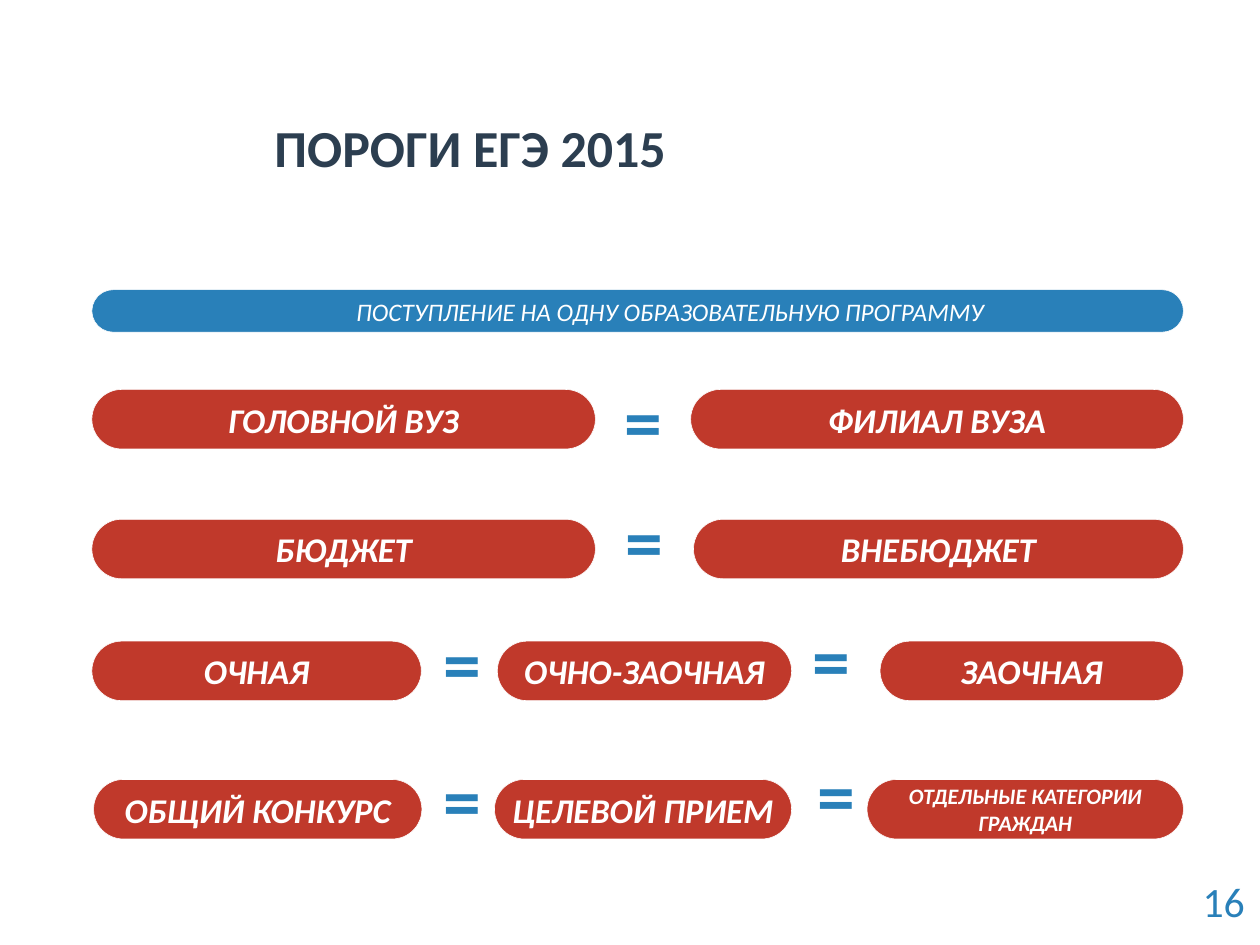
from pptx import Presentation
from pptx.dml.color import RGBColor
from pptx.enum.shapes import MSO_SHAPE
from pptx.enum.text import MSO_ANCHOR, PP_ALIGN
from pptx.util import Pt

PX = 9144
FONT = "Calibri"
COLORS = {"navy": "2C3E50", "blue": "2980B9", "red": "C0392B", "white": "FFFFFF"}
LEFT, WIDTH, PILL_H, SIGN_H = 162, 1925, 105, 172

ROWS = [
    (687, [(0, 888, "ГОЛОВНОЙ ВУЗ", 44), (1056, 869, "ФИЛИАЛ ВУЗА", 44)],
     [(888, -33, 168)]),
    (916, [(0, 888, "БЮДЖЕТ", 44), (1061, 864, "ВНЕБЮДЖЕТ", 44)],
     [(893, -49, 163)]),
    (1131, [(0, 581, "ОЧНАЯ", 44), (715, 519, "ОЧНО-ЗАОЧНАЯ", 44),
            (1390, 535, "ЗАОЧНАЯ", 44)],
     [(582, -49, 141), (1229, -54, 151)]),
    (1375, [(3, 579, "ОБЩИЙ КОНКУРС", 44), (710, 524, "ЦЕЛЕВОЙ ПРИЕМ", 44),
            (1367, 558, "ОТДЕЛЬНЫЕ КАТЕГОРИИ ГРАЖДАН", 28)],
     [(582, -52, 141), (1235, -61, 155)]),
]


def rgb(name):
    """Return a palette colour."""
    return RGBColor.from_string(COLORS[name])


def emu(box):
    """Turn a box in px into EMU."""
    return [v * PX for v in box]


def write(tf, text, size, color, bold=False, italic=False, align=PP_ALIGN.CENTER):
    """Write one formatted run into a text frame."""
    p = tf.paragraphs[0]
    p.alignment = align
    r = p.add_run()
    r.text = text
    r.font.name = FONT
    r.font.size = Pt(size)
    r.font.bold = bold
    r.font.italic = italic
    r.font.color.rgb = rgb(color)


def add_label(slide, box, text, size, color, wrap=True, **style):
    """Add a text box and return its text frame."""
    tf = slide.shapes.add_textbox(*emu(box)).text_frame
    tf.word_wrap = wrap
    write(tf, text, size, color, **style)
    return tf


def add_pill(slide, box, text, size, fill, bold=True):
    """Add a fully rounded bar with italic text and return its text frame."""
    sp = slide.shapes.add_shape(MSO_SHAPE.ROUNDED_RECTANGLE, *emu(box))
    sp.adjustments[0] = 0.5
    sp.shadow.inherit = False
    sp.fill.solid()
    sp.fill.fore_color.rgb = rgb(fill)
    sp.line.color.rgb = rgb("white")
    sp.line.width = Pt(0.75)
    tf = sp.text_frame
    tf.word_wrap = True
    tf.vertical_anchor = MSO_ANCHOR.MIDDLE
    write(tf, text, size, "white", bold=bold, italic=True)
    return tf


def add_title(slide, box):
    """Add the slide title."""
    tf = add_label(slide, box, "ПОРОГИ ЕГЭ 2015", 66, "navy", bold=True,
                   align=PP_ALIGN.LEFT)
    tf.vertical_anchor = MSO_ANCHOR.MIDDLE
    tf.margin_left = tf.margin_right = 22 * PX
    tf.margin_top = tf.margin_bottom = 11 * PX


def add_banner(slide, box):
    """Add the blue bar, its text shifted right of centre."""
    tf = add_pill(slide, box, "ПОСТУПЛЕНИЕ НА ОДНУ ОБРАЗОВАТЕЛЬНУЮ ПРОГРАММУ",
                  32, "blue", bold=False)
    tf.margin_left = 125 * PX


def add_equality(slide, x, y, pills, signs):
    """Add a row of red pills joined by equals signs."""
    for dx, w, text, size in pills:
        add_pill(slide, (x + dx, y, w, PILL_H), text, size, "red")
    for dx, dy, w in signs:
        add_label(slide, (x + dx, y + dy, w, SIGN_H), "=", 96, "blue", bold=True)


def main():
    """Build and save the slide."""
    prs = Presentation()
    prs.slide_width, prs.slide_height = emu((2222, 1667))
    slide = prs.slides.add_slide(prs.slide_layouts[6])
    add_title(slide, (462, 138, 1707, 242))
    add_banner(slide, (LEFT, 511, WIDTH, 75))
    for y, pills, signs in ROWS:
        add_equality(slide, LEFT, y, pills, signs)
    add_label(slide, (2111, 1540, 96, 99), "16", 53, "blue", wrap=False,
              align=PP_ALIGN.LEFT)
    prs.save("out.pptx")


if __name__ == "__main__":
    main()
